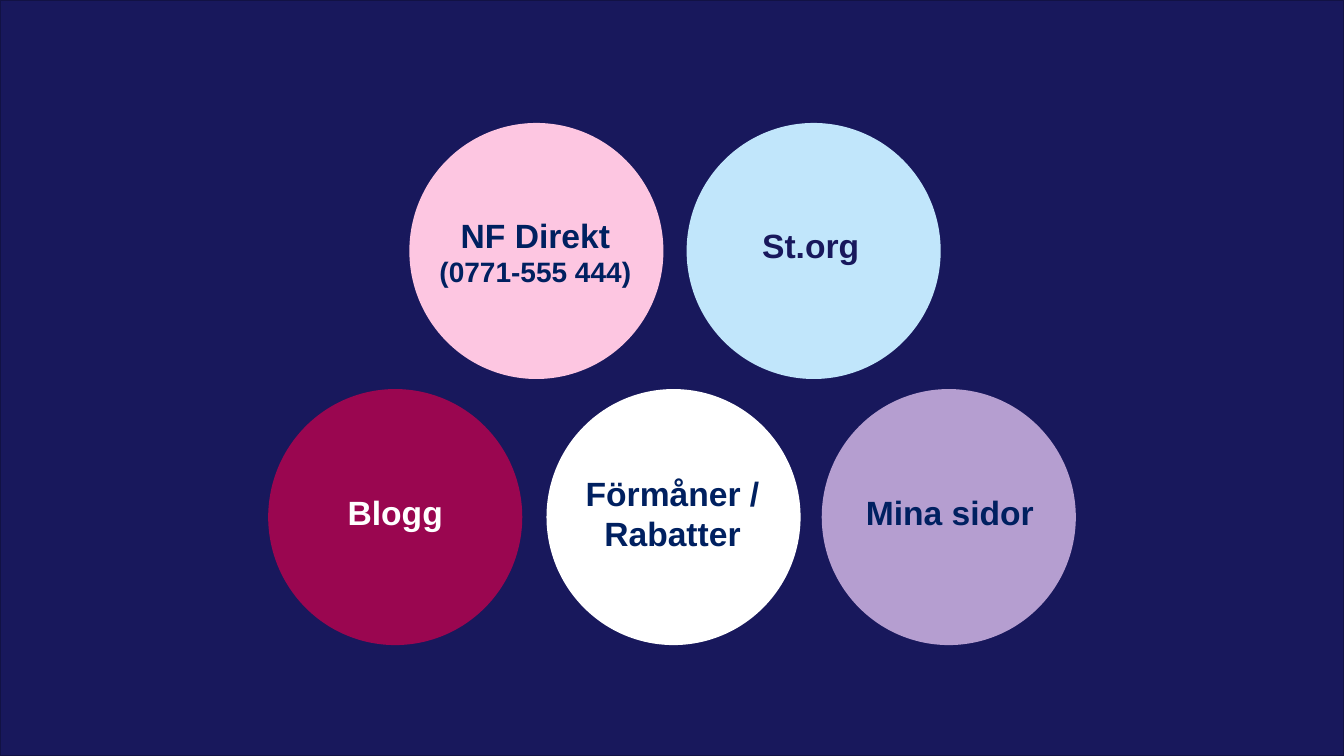
"""Build a slide with five coloured circles that name member channels."""
from pptx import Presentation
from pptx.dml.color import RGBColor
from pptx.enum.shapes import MSO_SHAPE
from pptx.enum.text import PP_ALIGN
from pptx.util import Inches, Pt

RECTANGLE = MSO_SHAPE.RECTANGLE
OVAL = MSO_SHAPE.OVAL
CENTER = PP_ALIGN.CENTER

COLORS = {
    "night": "18185C",
    "edge": "121244",
    "navy": "002060",
    "wine": "9A0650",
    "white": "FFFFFF",
    "lilac": "B59ED0",
    "pink": "FDC6E1",
    "sky": "C1E6FB",
}
CIRCLE_WIDTH, CIRCLE_HEIGHT = 2.52, 2.54
TOP_ROW, BOTTOM_ROW = 1.22, 3.86

# left, top, fill, label left, label top, label height, text color, lines with sizes
CHANNELS = [
    (2.66, BOTTOM_ROW, "wine", 2.66, 4.83, 0.5, "white", [("Blogg", 24)]),
    (5.42, BOTTOM_ROW, "white", 5.41, 4.64, 0.91, "navy", [("Förmåner / Rabatter", 24)]),
    (8.15, BOTTOM_ROW, "lilac", 8.16, 4.83, 0.5, "navy", [("Mina sidor", 24)]),
    (4.06, TOP_ROW, "pink", 4.05, 2.08, 0.84, "navy", [("NF Direkt", 24), ("(0771-555 444)", 20)]),
    (6.81, TOP_ROW, "sky", 6.78, 2.18, 0.5, "night", [("St.org", 24)]),
]


def color(name):
    return RGBColor.from_string(COLORS[name])


def add_filled_shape(kind, left, top, width, height, fill):
    shape = slide.shapes.add_shape(kind, Inches(left), Inches(top), Inches(width), Inches(height))
    shape.shadow.inherit = False
    shape.fill.solid()
    shape.fill.fore_color.rgb = color(fill)
    shape.line.fill.background()
    return shape


presentation = Presentation()
presentation.slide_width = Inches(13.33)
presentation.slide_height = Inches(7.5)
slide = presentation.slides.add_slide(presentation.slide_layouts[6])

backdrop = add_filled_shape(RECTANGLE, 0, 0, 13.33, 7.5, "night")
backdrop.line.color.rgb = color("edge")
backdrop.line.width = Pt(1)

for left, top, fill, label_left, label_top, label_height, text_color, lines in CHANNELS:
    add_filled_shape(OVAL, left, top, CIRCLE_WIDTH, CIRCLE_HEIGHT, fill)
    label = slide.shapes.add_textbox(
        Inches(label_left), Inches(label_top), Inches(CIRCLE_WIDTH), Inches(label_height)
    )
    text_frame = label.text_frame
    text_frame.word_wrap = True
    text_frame.text = "\n".join(text for text, size in lines)
    for paragraph, (text, size) in zip(text_frame.paragraphs, lines):
        paragraph.alignment = CENTER
        paragraph.font.name = "Arial"
        paragraph.font.size = Pt(size)
        paragraph.font.bold = True
        paragraph.font.color.rgb = color(text_color)

presentation.save("out.pptx")
